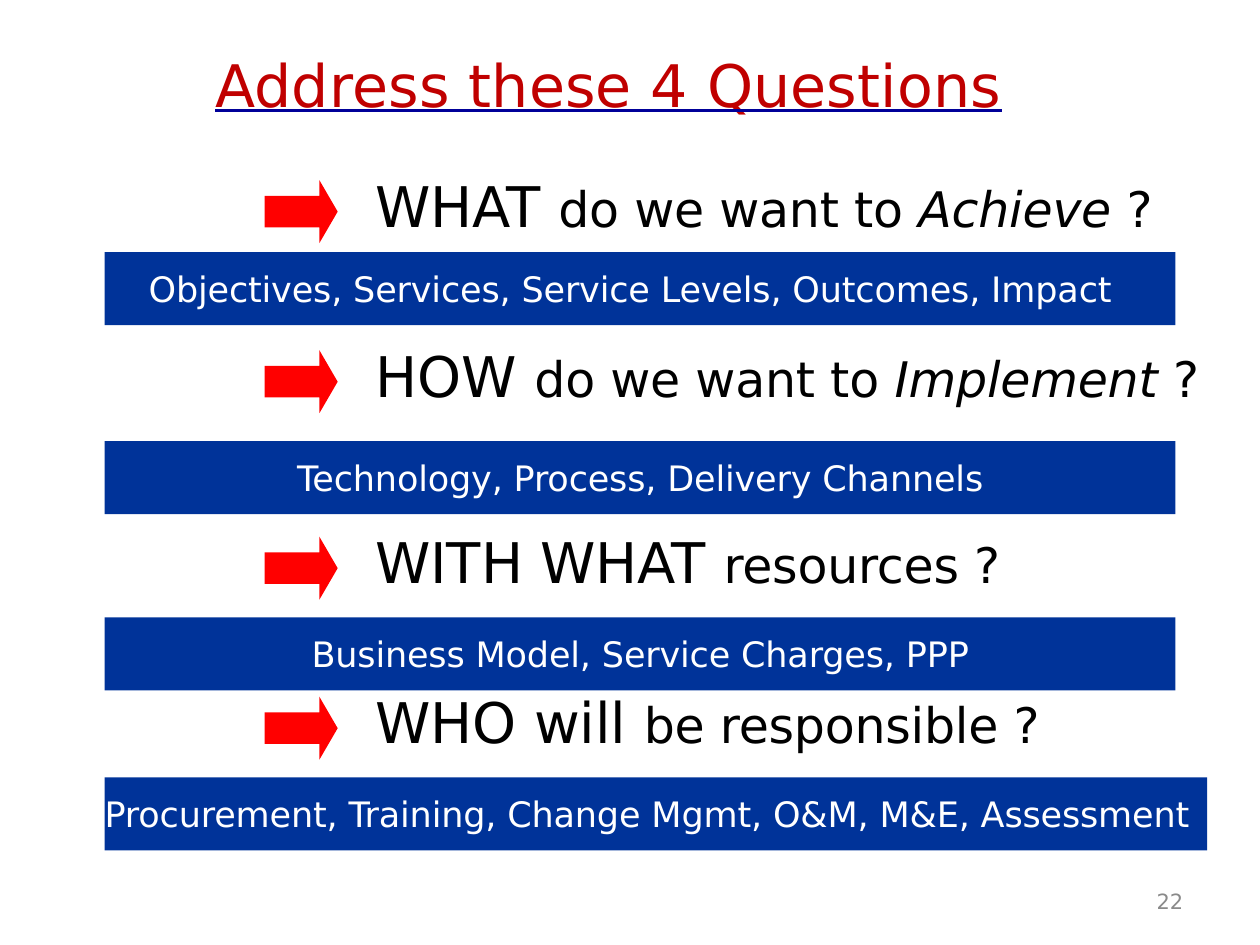
from dataclasses import dataclass

from lxml import etree
from pptx import Presentation
from pptx.dml.color import RGBColor
from pptx.enum import shapes, text
from pptx.oxml.ns import qn
from pptx.util import Inches, Pt


@dataclass(frozen=True)
class Theme:
    font: str = "DejaVu Sans"
    title: str = "C00000"
    underline: str = "000099"
    ink: str = "000000"
    arrow: str = "FF0000"
    bar: str = "003399"
    bar_text: str = "FFFFFF"
    number: str = "8A8A8A"
    title_size: float = 33.5
    key_size: int = 32
    question_size: int = 28
    bar_size: int = 20
    number_size: int = 12


THEME = Theme()
LEFT, CENTER = text.PP_ALIGN.LEFT, text.PP_ALIGN.CENTER

ROWS = [
    (1.35, [("WHAT ", "key"), ("do we want to ", ""), ("Achieve ", "italic"), ("?", "")], 6.26,
     2, "Objectives, Services, Service Levels, Outcomes, Impact", 8.5, LEFT, 0.35),
    (2.7, [("HOW ", "key"), ("do we want to ", ""), ("Implement ", "italic"), ("?", "")], 6.68,
     3.5, "Technology, Process, Delivery Channels", 8.5, CENTER, 0),
    (4.18, [("WITH WHAT ", "key"), ("resources ", ""), ("?", "")], 5.13,
     4.9, "Business Model, Service Charges, PPP", 8.5, CENTER, 0),
    (5.45, [("WHO will ", "key"), ("be responsible ", ""), ("?", "")], 5.34,
     6.17, "Procurement, Training, Change Mgmt, O&M, M&E, Assessment", 8.75, LEFT, 0),
]


def write(sp, runs, size, color, align=LEFT, left=0.01, top=0.01, before=1,
          spacing=-0.1, underline=None):
    tf = sp.text_frame
    tf.word_wrap = True
    tf.vertical_anchor = text.MSO_ANCHOR.TOP
    tf.margin_left, tf.margin_top = Inches(left), Inches(top)
    tf.margin_right = tf.margin_bottom = 0
    p = tf.paragraphs[0]
    p.alignment = align
    p.space_before = Pt(before)
    for words, style in runs:
        r = p.add_run()
        r.text = words
        font = r.font
        font.name = THEME.font
        font.size = Pt(THEME.key_size if style == "key" else size)
        font.italic = style == "italic"
        font.color.rgb = RGBColor.from_string(color)
        props = r._r.get_or_add_rPr()
        props.set("spc", str(round(spacing * 100)))
        if underline:
            font.underline = True
            fill = etree.Element(qn("a:uFill"))
            solid = etree.SubElement(fill, qn("a:solidFill"))
            etree.SubElement(solid, qn("a:srgbClr"), val=underline)
            props.find(qn("a:latin")).addprevious(fill)


def add_text(s, box, runs, size, color, **fmt):
    sp = s.shapes.add_textbox(*map(Inches, box))
    write(sp, runs, size, color, **fmt)


def add_block(s, kind, box, color):
    sp = s.shapes.add_shape(kind, *map(Inches, box))
    sp.shadow.inherit = False
    sp.fill.solid()
    sp.fill.fore_color.rgb = RGBColor.from_string(color)
    sp.line.fill.background()
    return sp


def add_question(s, box, runs):
    left, top, _, _ = box
    add_text(s, box, runs, THEME.question_size, THEME.ink)
    arrow = add_block(s, shapes.MSO_SHAPE.RIGHT_ARROW,
                      (left - 0.87, top + 0.08, 0.58, 0.5), THEME.arrow)
    arrow.adjustments[0] = 0.5
    arrow.adjustments[1] = 0.29


def add_bar(s, box, words, align, indent):
    bar = add_block(s, shapes.MSO_SHAPE.RECTANGLE, box, THEME.bar)
    write(bar, [(words, "")], THEME.bar_size, THEME.bar_text,
          align=align, left=indent, top=0.12, before=9)


def main():
    prs = Presentation()
    prs.slide_width, prs.slide_height = Inches(10), Inches(7.5)
    s = prs.slides.add_slide(prs.slide_layouts[6])

    add_text(s, (1.7, 0.37, 7.09, 0.59), [("Address these 4 Questions", "")],
             THEME.title_size, THEME.title, top=0.02, spacing=0.1,
             underline=THEME.underline)
    for top, question, width, bar_top, answer, bar_width, align, indent in ROWS:
        add_question(s, (2.97, top, width, 0.56), question)
        add_bar(s, (0.83, bar_top, bar_width, 0.58), answer, align, indent)
    add_text(s, (9.17, 7.04, 0.24, 0.23), [("22", "")],
             THEME.number_size, THEME.number, spacing=0)

    prs.save("out.pptx")


if __name__ == "__main__":
    main()
